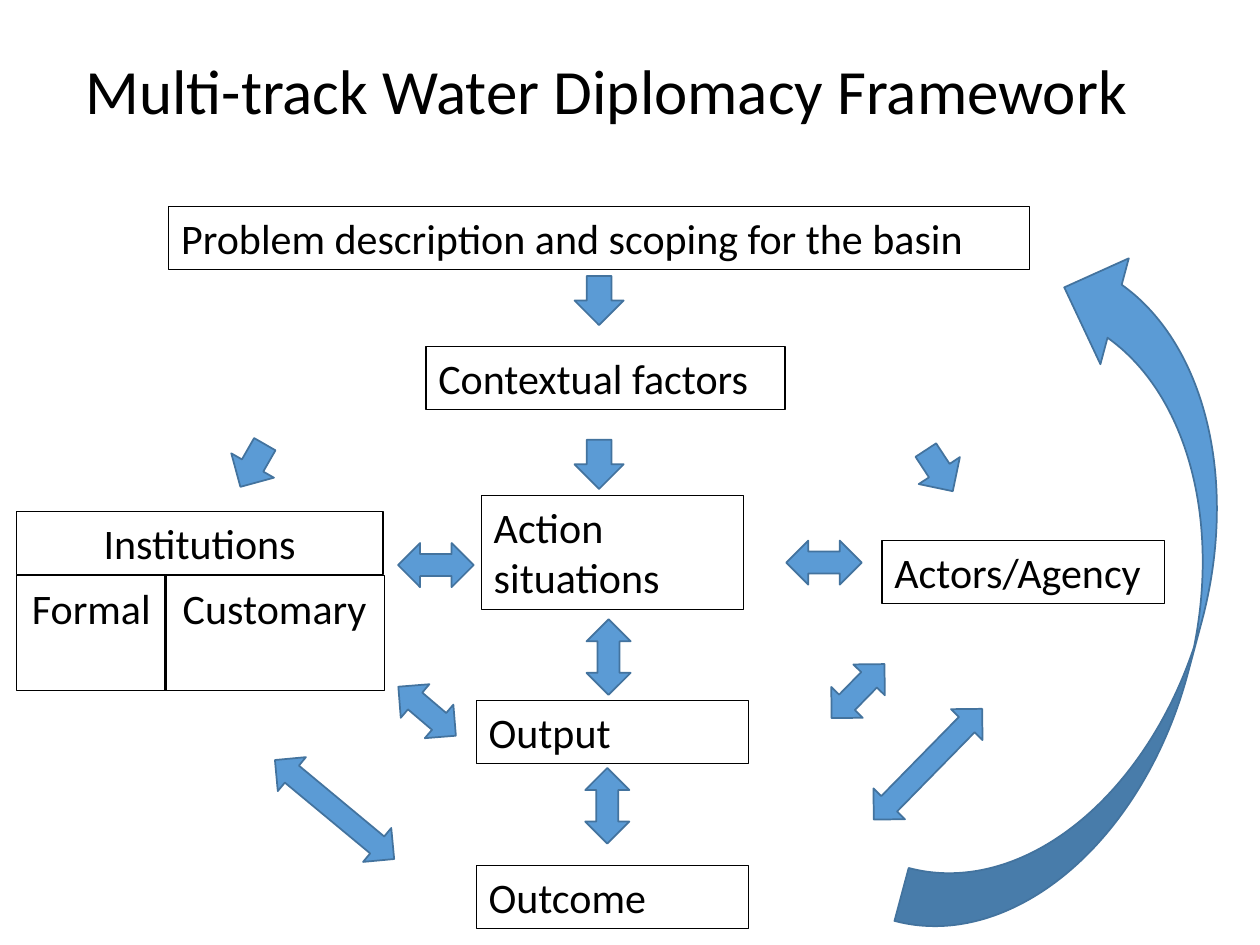
from pptx import Presentation
from pptx.dml.color import RGBColor
from pptx.enum.shapes import MSO_SHAPE
from pptx.enum.text import MSO_ANCHOR, PP_ALIGN
from pptx.util import Emu, Pt

PX = 9144


def px(n):
    return Emu(n * PX)


def rgb(value):
    return RGBColor.from_string(value)


class Deck:
    font = "Calibri"
    ink = "000000"
    fill = "5B9BD5"
    edge = "43739E"

    def __init__(self, width, height):
        self.prs = Presentation()
        self.prs.slide_width, self.prs.slide_height = px(width), px(height)
        self.s = self.prs.slides.add_slide(self.prs.slide_layouts[6])

    def text(self, text, x, y, w, h, size=24, align=PP_ALIGN.LEFT):
        sp = self.s.shapes.add_textbox(px(x), px(y), px(w), px(h))
        tf = sp.text_frame
        tf.word_wrap = True
        tf.vertical_anchor = MSO_ANCHOR.TOP
        p = tf.paragraphs[0]
        p.alignment = align
        r = p.add_run()
        r.text = text
        r.font.name = self.font
        r.font.size = Pt(size)
        r.font.color.rgb = rgb(self.ink)
        return sp

    def box(self, text, x, y, w, h=50, align=PP_ALIGN.LEFT):
        sp = self.text(text, x, y, w, h, align=align)
        sp.line.color.rgb = rgb(self.ink)
        sp.line.width = Pt(0.75)

    def arrow(self, kind, x, y, w, h, rotation=0):
        sp = self.s.shapes.add_shape(kind, px(x), px(y), px(w), px(h))
        sp.rotation = rotation
        sp.shadow.inherit = False
        sp.fill.solid()
        sp.fill.fore_color.rgb = rgb(self.fill)
        sp.line.color.rgb = rgb(self.edge)
        sp.line.width = Pt(1)

    def down(self, x, y, rotation=0):
        self.arrow(MSO_SHAPE.DOWN_ARROW, x, y, 39, 39, rotation)

    def double(self, x, y, w=60, rotation=0):
        self.arrow(MSO_SHAPE.LEFT_RIGHT_ARROW, x, y, w, 35, rotation)


def main():
    deck = Deck(1000, 750)
    deck.text("Multi-track Water Diplomacy Framework", 58, 36, 890, 71, size=36)

    deck.box("Problem description and scoping for the basin", 134, 164, 683)
    deck.box("Contextual factors", 338, 275, 285)
    deck.box("Action situations", 382, 393, 208, 91)
    deck.box("Actors/Agency", 700, 429, 224)
    for label, y in (("Output", 556), ("Outcome", 687)):
        deck.box(label, 378, y, 216)

    for label, x, y, w, h in (
        ("Institutions", 13, 406, 291, 50),
        ("Formal", 13, 457, 119, 91),
        ("Customary", 131, 457, 174, 91),
    ):
        deck.box(label, x, y, w, h, PP_ALIGN.CENTER)

    for x, y, rotation in (
        (456, 219, 0),
        (181, 350, 29.8),
        (456, 349, 0),
        (726, 354, 326.8),
    ):
        deck.down(x, y, rotation)

    for x, y, w, rotation in (
        (316, 431, 60, 0),
        (624, 429, 60, 0),
        (453, 504, 60, 270),
        (452, 622, 60, 270),
        (309, 547, 60, 40.4),
        (204, 625, 123, 39.7),
        (651, 531, 60, 314.4),
        (675, 589, 123, 314.4),
    ):
        deck.double(x, y, w, rotation)

    deck.arrow(MSO_SHAPE.CURVED_UP_ARROW, 585, 394, 564, 174, 285)
    deck.prs.save("out.pptx")


if __name__ == "__main__":
    main()
